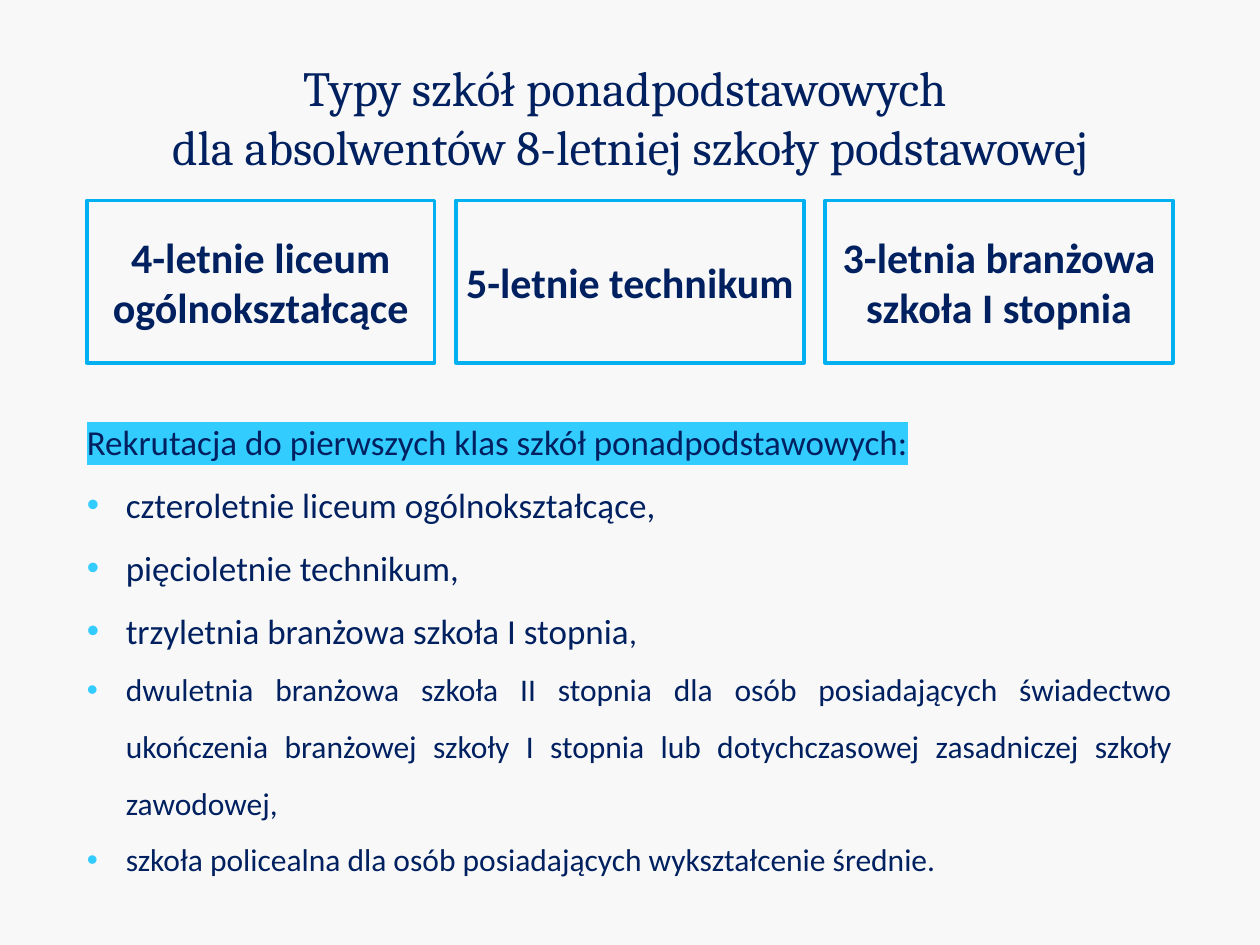
import lxml.etree
import pptx
import pptx.dml.color
import pptx.enum.shapes
import pptx.enum.text
import pptx.oxml.ns
import pptx.util

Inches = pptx.util.Inches
Align = pptx.enum.text.PP_ALIGN
Anchor = pptx.enum.text.MSO_ANCHOR
RGBColor = pptx.dml.color.RGBColor

NAVY = RGBColor(0x00, 0x20, 0x60)
BLUE = RGBColor(0x00, 0xB0, 0xF0)
SKY = RGBColor(0x33, 0xCC, 0xFF)
PALE = RGBColor(0xF8, 0xF8, 0xF8)

TITLE = "Typy szkół ponadpodstawowych \vdla absolwentów 8-letniej szkoły podstawowej"
SCHOOLS = [
    "4-letnie liceum ogólnokształcące",
    "5-letnie technikum",
    "3-letnia branżowa szkoła I stopnia",
]
HEADING = "Rekrutacja do pierwszych klas szkół ponadpodstawowych:"
# Each item is a list of (text, size) spans.
ITEMS = [
    [("czteroletnie liceum ogólnokształcące,", 20)],
    [("pięcioletnie technikum,", 20)],
    [("trzyletnia branżowa szkoła I stopnia", 20), (",", 18)],
    [("dwuletnia branżowa szkoła II stopnia dla osób posiadających świadectwo "
      "ukończenia branżowej szkoły I stopnia lub dotychczasowej zasadniczej "
      "szkoły zawodowej,", 18)],
    [("szkoła policealna dla osób posiadających wykształcenie średnie.", 18)],
]


def style_span(span, size, font="Calibri", bold=False):
    span.font.size = pptx.util.Pt(size)
    span.font.name = font
    span.font.bold = bold
    span.font.color.rgb = NAVY


def add_color_element(parent, tag, color):
    element = lxml.etree.SubElement(parent, pptx.oxml.ns.qn(tag))
    lxml.etree.SubElement(element, pptx.oxml.ns.qn("a:srgbClr"), val=str(color))
    return element


def highlight(span, color):
    """Put the highlight right after the fill, where the schema wants it."""
    properties = span.font._element
    mark = add_color_element(properties, "a:highlight", color)
    properties.find(pptx.oxml.ns.qn("a:solidFill")).addnext(mark)


def add_bullet(para, indent, color):
    properties = para._p.get_or_add_pPr()
    properties.set("marL", str(indent))
    properties.set("indent", str(-indent))
    add_color_element(properties, "a:buClr", color)
    lxml.etree.SubElement(properties, pptx.oxml.ns.qn("a:buFont"), typeface="Arial")
    lxml.etree.SubElement(properties, pptx.oxml.ns.qn("a:buChar"), char="•")


def add_title(page, left, top, width, height):
    frame = page.shapes.add_textbox(left, top, width, height).text_frame
    frame.word_wrap = True
    frame.vertical_anchor = Anchor.MIDDLE
    para = frame.paragraphs[0]
    para.text = TITLE
    para.alignment = Align.CENTER
    for span in para.runs:
        style_span(span, 28, "Cambria")


def add_school_boxes(page, left, top, width, height, gap=Inches(0.17)):
    group = page.shapes.add_group_shape()
    box_width = (width - gap * (len(SCHOOLS) - 1)) // len(SCHOOLS)
    for index, school in enumerate(SCHOOLS):
        box = group.shapes.add_shape(
            pptx.enum.shapes.MSO_SHAPE.RECTANGLE,
            left + index * (box_width + gap), top, box_width, height)
        box.shadow.inherit = False
        box.fill.background()
        box.line.color.rgb = BLUE
        box.line.width = pptx.util.Pt(2)
        frame = box.text_frame
        frame.word_wrap = True
        frame.vertical_anchor = Anchor.MIDDLE
        frame.margin_left = frame.margin_right = 0
        frame.margin_top = frame.margin_bottom = 0
        frame.text = school
        para = frame.paragraphs[0]
        para.alignment = Align.CENTER
        style_span(para.runs[0], 24, bold=True)


def add_recruitment_list(page, left, top, width, height):
    frame = page.shapes.add_textbox(left, top, width, height).text_frame
    frame.word_wrap = True
    frame.text = HEADING
    heading = frame.paragraphs[0]
    style_span(heading.runs[0], 20)
    highlight(heading.runs[0], SKY)
    for item in ITEMS:
        para = frame.add_paragraph()
        for text, size in item:
            span = para.add_run()
            span.text = text
            style_span(span, size)
    for para in frame.paragraphs:
        para.alignment = Align.JUSTIFY
        para.line_spacing = 1.5
    for para in frame.paragraphs[1:]:
        add_bullet(para, Inches(0.31), SKY)


def main():
    deck = pptx.Presentation()
    deck.slide_width = Inches(10)
    deck.slide_height = Inches(7.5)
    page = deck.slides.add_slide(deck.slide_layouts[6])
    page.background.fill.solid()
    page.background.fill.fore_color.rgb = PALE
    add_title(page, Inches(0.5), Inches(0.3), Inches(9), Inches(1.25))
    add_school_boxes(page, Inches(0.69), Inches(1.59), Inches(8.62), Inches(1.29))
    add_recruitment_list(page, Inches(0.59), Inches(3.12), Inches(8.81), Inches(3.88))
    deck.save("out.pptx")


if __name__ == "__main__":
    main()
